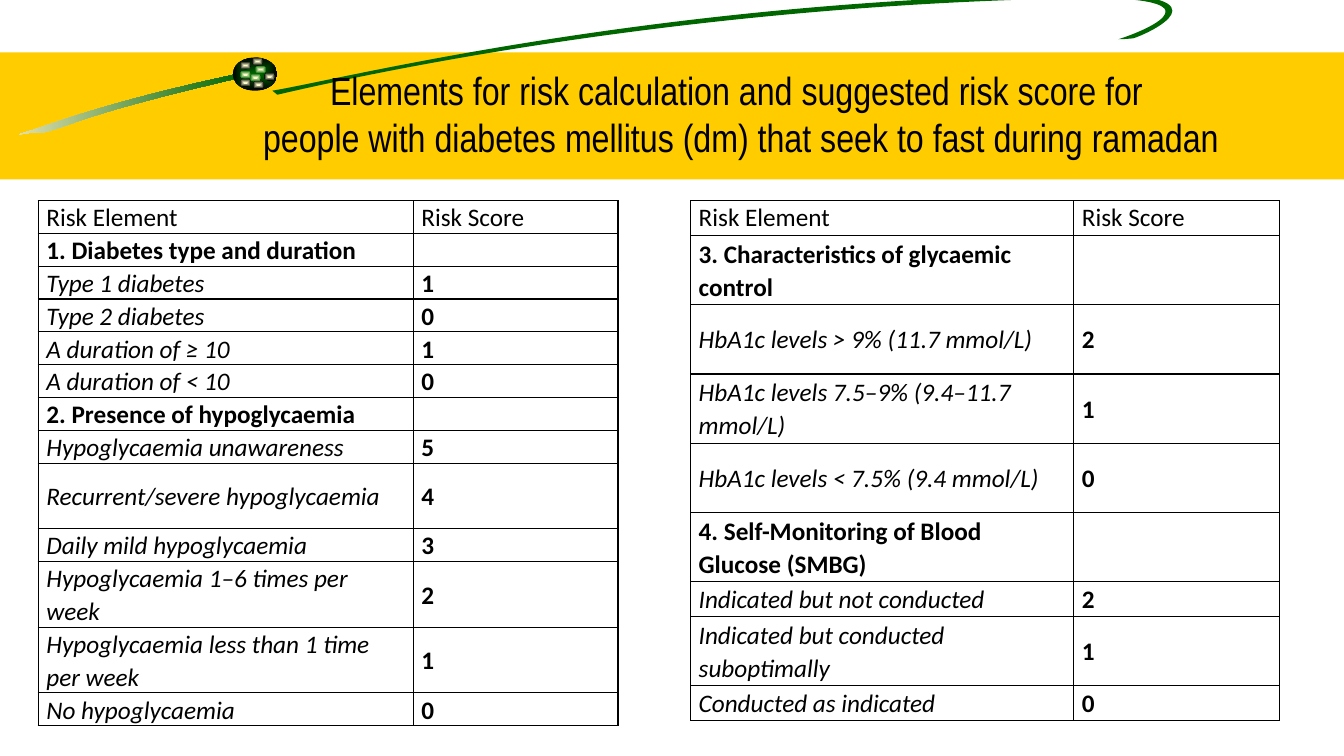
import math

from lxml import etree
from pptx import Presentation, util as u
from pptx.dml.color import RGBColor
from pptx.enum import shapes, text
from pptx.oxml import ns

BLACK = RGBColor(0x00, 0x00, 0x00)
YELLOW = RGBColor(0xFF, 0xCC, 0x00)
GREEN = RGBColor(0x00, 0x66, 0x00)
CREAM = RGBColor(0xF5, 0xEB, 0xC1)
PALE = RGBColor(0xFF, 0xFF, 0xCC)

TITLE = ("Elements for risk calculation and suggested risk score for \v"
         "people with diabetes mellitus (dm) that seek to fast during ramadan")

# Each row: label, score, height in lines; a row without a score is a section heading
LEFT_ROWS = [
    ("Risk Element", "Risk Score", 1),
    ("1. Diabetes type and duration", "", 1),
    ("Type 1 diabetes", "1", 1),
    ("Type 2 diabetes", "0", 1),
    ("A duration of ≥ 10", "1", 1),
    ("A duration of < 10", "0", 1),
    ("2. Presence of hypoglycaemia", "", 1),
    ("Hypoglycaemia unawareness", "5", 1),
    ("Recurrent/severe hypoglycaemia", "4", 2),
    ("Daily mild hypoglycaemia", "3", 1),
    ("Hypoglycaemia 1–6 times per week", "2", 2),
    ("Hypoglycaemia less than 1 time per week", "1", 2),
    ("No hypoglycaemia", "0", 1),
]
RIGHT_ROWS = [
    ("Risk Element", "Risk Score", 1),
    ("3. Characteristics of glycaemic control", "", 2),
    ("HbA1c levels > 9% (11.7 mmol/L)", "2", 2),
    ("HbA1c levels 7.5–9% (9.4–11.7 mmol/L)", "1", 2),
    ("HbA1c levels < 7.5% (9.4 mmol/L)", "0", 2),
    ("4. Self-Monitoring of Blood Glucose (SMBG)", "", 2),
    ("Indicated but not conducted", "2", 1),
    ("Indicated but conducted suboptimally", "1", 2),
    ("Conducted as indicated", "0", 1),
]

# Swooshes: start point, then two controls and an end point for each curve
SWOOSH_ANGLE = 351.5
TAIL_CENTRE = (1.2, 1.06)
TAIL = [(2.38, 0.73),
        (1.21, 0.98), (0.65, 1.18), (0.33, 1.29),
        (0, 1.39), (0.34, 1.29), (0.41, 1.32),
        (0.75, 1.24), (0.76, 1.15), (2.39, 0.77),
        (2.39, 0.77), (2.38, 0.73), (2.38, 0.73)]
ARC_CENTRE = (7.45, 0.4)
ARC = [(2.7, 0.9),
       (3.29, 0.81), (6.51, -0.02), (10.86, -0.06),
       (12.21, -0.05), (11.4, 0.33), (11.24, 0.38),
       (11.24, 0.38), (11.15, 0.39), (11.09, 0.39),
       (11.23, 0.35), (12.21, -0.01), (10.84, -0.02),
       (7.32, 0.03), (4.29, 0.58), (2.75, 0.94),
       (2.75, 0.94), (2.7, 0.9), (2.7, 0.9)]

# Spots on the bead: left, top, outer colour
SPOTS = [(2.53, 0.65, GREEN), (2.38, 0.61, BLACK), (2.38, 0.7, GREEN),
         (2.48, 0.73, GREEN), (2.62, 0.72, BLACK), (2.51, 0.8, BLACK),
         (2.38, 0.78, BLACK), (2.5, 0.57, BLACK)]


def apply_format(target, values):
    for name, value in values.items():
        setattr(target, name, value)


def add_child(parent, tag, **attributes):
    return etree.SubElement(parent, ns.qn(tag), **attributes)


def fill_plain(shape, colour):
    shape.shadow.inherit = False
    shape.line.fill.background()
    shape.fill.solid()
    shape.fill.fore_color.rgb = colour


def fill_gradient(shape, first, last, radial):
    fill_plain(shape, first)
    shape.fill.gradient()
    shape.fill.gradient_angle = 0
    for stop, colour, position in zip(shape.fill.gradient_stops, (first, last), (0, 1)):
        stop.position = position
        stop.color.rgb = colour
    if radial:
        gradient = shape.element.spPr.find(ns.qn("a:gradFill"))
        gradient.remove(gradient.find(ns.qn("a:lin")))
        centre = add_child(gradient, "a:path", path="shape")
        add_child(centre, "a:fillToRect", l="50000", t="50000", r="50000", b="50000")


def add_preset(slide, kind, left, top, width, height):
    return slide.shapes.add_shape(kind, u.Inches(left), u.Inches(top),
                                  u.Inches(width), u.Inches(height))


def turn_back(point, centre):
    angle = math.radians(-SWOOSH_ANGLE)
    across, down = point[0] - centre[0], point[1] - centre[1]
    return (u.Inches(centre[0] + across * math.cos(angle) - down * math.sin(angle)),
            u.Inches(centre[1] + across * math.sin(angle) + down * math.cos(angle)))


def add_swoosh(slide, outline, centre):
    start, *points = [turn_back(point, centre) for point in outline]
    builder = slide.shapes.build_freeform(*start)
    builder.add_line_segments(points, close=True)
    shape = builder.convert_to_shape()
    shape.rotation = SWOOSH_ANGLE
    # Join every three straight segments into one cubic curve
    segments = list(shape.element.spPr.iter(ns.qn("a:lnTo")))
    for index in range(0, len(segments), 3):
        curve = etree.Element(ns.qn("a:cubicBezTo"))
        segments[index].addprevious(curve)
        for segment in segments[index:index + 3]:
            curve.append(segment[0])
            segment.getparent().remove(segment)
    return shape


def add_bead(slide):
    bead = add_preset(slide, shapes.MSO_SHAPE.OVAL, 2.31, 0.57, 0.44, 0.33)
    fill_gradient(bead, GREEN, BLACK, radial=True)
    for left, top, colour in SPOTS:
        spot = add_preset(slide, shapes.MSO_SHAPE.OVAL, left, top, 0.11, 0.08)
        fill_gradient(spot, PALE, colour, radial=True)


def write_text(paragraph, content, font_name, size, **style):
    paragraph.text = content
    for run in paragraph.runs:
        apply_format(run.font, {"name": font_name, "size": u.Pt(size), **style})
        run.font.color.rgb = BLACK


def add_title(slide):
    box = slide.shapes.add_textbox(u.Inches(1.68), u.Inches(0.5),
                                   u.Inches(11.33), u.Inches(1.25))
    frame = box.text_frame
    apply_format(frame, {"word_wrap": True, "vertical_anchor": text.MSO_ANCHOR.MIDDLE})
    paragraph = frame.paragraphs[0]
    paragraph.alignment = text.PP_ALIGN.CENTER
    write_text(paragraph, TITLE, "Arial Narrow", 28)


def format_cell(cell, content, anchor, **style):
    apply_format(cell, {"margin_left": u.Inches(0.08), "margin_right": u.Inches(0.08),
                        "margin_top": 0, "margin_bottom": 0, "vertical_anchor": anchor})
    properties = cell._tc.get_or_add_tcPr()
    for side in ("a:lnL", "a:lnR", "a:lnT", "a:lnB"):
        border = add_child(properties, side, w=str(u.Pt(1)))
        add_child(add_child(border, "a:solidFill"), "a:srgbClr", val=str(BLACK))
    cell.fill.background()
    if content:
        paragraph = cell.text_frame.paragraphs[0]
        apply_format(paragraph, {"line_spacing": 1.07, "space_after": u.Pt(8)})
        write_text(paragraph, content, "Calibri", 18, **style)


def add_score_table(slide, left, height, widths, rows, header_anchor):
    line_height = height / sum(row[2] for row in rows)
    frame = slide.shapes.add_table(len(rows), 2, u.Inches(left), u.Inches(1.99),
                                   u.Inches(sum(widths)), u.Inches(height))
    table = frame.table
    apply_format(table, {"first_row": False, "horz_banding": False})
    for column, width in zip(table.columns, widths):
        column.width = u.Inches(width)
    for index, (label, score, lines) in enumerate(rows):
        table.rows[index].height = u.Inches(lines * line_height)
        header, section = index == 0, not score
        anchor = header_anchor if header else text.MSO_ANCHOR.MIDDLE
        format_cell(table.cell(index, 0), label, anchor, bold=section,
                    italic=not (header or section))
        format_cell(table.cell(index, 1), score, anchor, bold=not header, italic=False)


def main():
    presentation = Presentation()
    apply_format(presentation, {"slide_width": u.Inches(13.33),
                                "slide_height": u.Inches(7.5)})
    slide = presentation.slides.add_slide(presentation.slide_layouts[6])

    # Banner with swooshes and bead
    fill_plain(add_preset(slide, shapes.MSO_SHAPE.RECTANGLE, 0, 0.52, 13.33, 1.26), YELLOW)
    fill_gradient(add_swoosh(slide, TAIL, TAIL_CENTRE), CREAM, GREEN, radial=False)
    fill_plain(add_swoosh(slide, ARC, ARC_CENTRE), GREEN)
    add_bead(slide)
    add_title(slide)

    # Risk score tables
    add_score_table(slide, 0.38, 5.21, (3.72, 2.03), LEFT_ROWS, text.MSO_ANCHOR.MIDDLE)
    add_score_table(slide, 6.85, 5.16, (3.8, 2.04), RIGHT_ROWS, text.MSO_ANCHOR.TOP)

    presentation.save("out.pptx")


if __name__ == "__main__":
    main()
